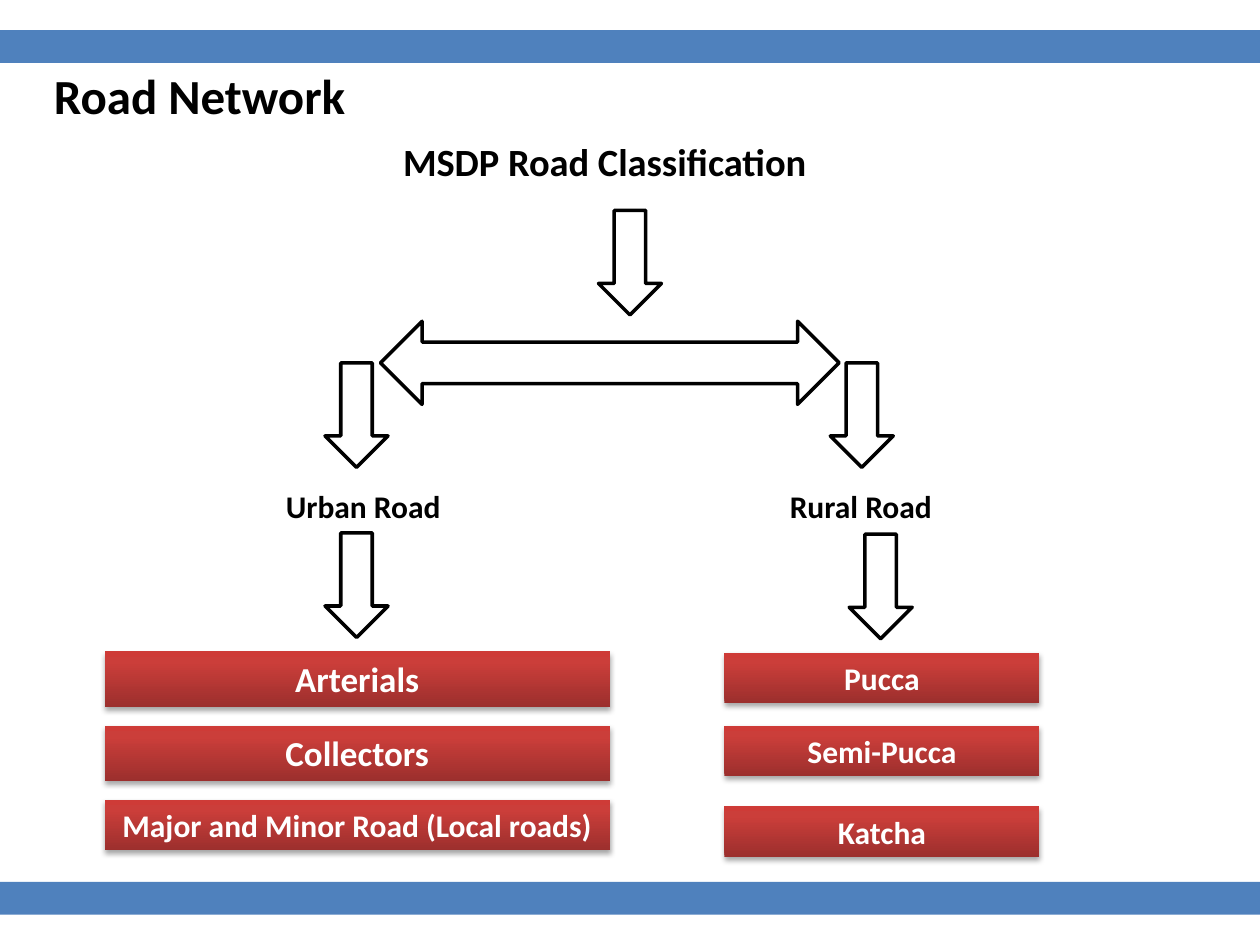
from copy import deepcopy

from lxml import etree
from pptx import Presentation
from pptx.dml.color import RGBColor
from pptx.enum.shapes import MSO_SHAPE
from pptx.enum.text import MSO_ANCHOR, PP_ALIGN
from pptx.oxml.ns import qn
from pptx.util import Inches, Pt

BLUE, BLACK, WHITE = "4F81BD", "000000", "FFFFFF"
RED_STOPS = [(0, "9C2F2D"), (0.8, "CB3E3A"), (1, "CE3B37")]


def color(hex_string):
    return RGBColor.from_string(hex_string)


def write(shape, text, size, hex_string):
    """Put one bold line of text in the shape."""
    shape.text_frame.text = text
    font = shape.text_frame.paragraphs[0].runs[0].font
    font.name = "Calibri"
    font.size = Pt(size)
    font.bold = True
    font.color.rgb = color(hex_string)


presentation = Presentation()
presentation.slide_width = Inches(10)
presentation.slide_height = Inches(7.5)
slide = presentation.slides.add_slide(presentation.slide_layouts[6])
shapes = slide.shapes

# Blue bands at the top and bottom
for top in (0.24, 7):
    band = shapes.add_shape(MSO_SHAPE.RECTANGLE, 0, Inches(top), Inches(10), Inches(0.26))
    band.shadow.inherit = False
    band.fill.solid()
    band.fill.fore_color.rgb = color(BLUE)
    band.line.fill.background()

# Title and headings
headings = [
    ("Road Network", 28, 0.33, 0.47, 2.54, 0.88),
    ("MSDP Road Classification", 22, 3.1, 1.05, 3.81, 0.47),
    ("Urban Road", 18, 2.17, 3.82, 1.44, 0.4),
    ("Rural Road", 18, 6.17, 3.82, 1.34, 0.4),
]
for text, size, left, top, width, height in headings:
    heading = shapes.add_textbox(Inches(left), Inches(top), Inches(width), Inches(height))
    heading.text_frame.word_wrap = False
    write(heading, text, size, BLACK)

# Outlined arrows from the classification to its branches
down_arrows = [(4.75, 1.67), (2.58, 4.23), (6.74, 4.24), (2.58, 2.88), (6.59, 2.88)]
arrows = [(MSO_SHAPE.DOWN_ARROW, left, top, 0.5, 0.83) for left, top in down_arrows]
arrows.insert(3, (MSO_SHAPE.LEFT_RIGHT_ARROW, 3.02, 2.55, 3.64, 0.66))
for kind, left, top, width, height in arrows:
    arrow = shapes.add_shape(kind, Inches(left), Inches(top), Inches(width), Inches(height))
    arrow.shadow.inherit = False
    arrow.fill.solid()
    arrow.fill.fore_color.rgb = color(WHITE)
    arrow.line.color.rgb = color(BLACK)
    arrow.line.width = Pt(2)

# Red boxes: urban classes on the left, rural classes on the right
road_classes = [
    ("Arterials", 20, 0.83, 5.17, 4.01, 0.44),
    ("Collectors", 20, 0.83, 5.76, 4.01, 0.44),
    ("Major and Minor Road (Local roads)", 18, 0.83, 6.35, 4.01, 0.4),
    ("Pucca", 18, 5.75, 5.18, 2.5, 0.4),
    ("Semi-Pucca", 18, 5.75, 5.76, 2.5, 0.4),
    ("Katcha", 18, 5.75, 6.4, 2.5, 0.4),
]
for text, size, left, top, width, height in road_classes:
    box = shapes.add_shape(
        MSO_SHAPE.RECTANGLE, Inches(left), Inches(top), Inches(width), Inches(height)
    )
    box.line.fill.background()
    box.fill.gradient()
    box.fill.gradient_angle = 90
    properties = box._element.spPr
    stop_list = properties.find(qn("a:gradFill")).find(qn("a:gsLst"))
    stop_list.append(deepcopy(stop_list[-1]))
    for stop, (position, hex_string) in zip(box.fill.gradient_stops, RED_STOPS):
        stop.position = position
        stop.color.rgb = color(hex_string)

    box.shadow.inherit = False
    shadow = etree.SubElement(
        properties.find(qn("a:effectLst")), qn("a:outerShdw"),
        blurRad=str(Pt(3.1)), dist=str(Pt(1.8)), dir="5400000", rotWithShape="0",
    )
    shadow_color = etree.SubElement(shadow, qn("a:srgbClr"), val=BLACK)
    etree.SubElement(shadow_color, qn("a:alpha"), val="35000")

    write(box, text, size, WHITE)
    box.text_frame.word_wrap = True
    box.text_frame.vertical_anchor = MSO_ANCHOR.TOP
    box.text_frame.paragraphs[0].alignment = PP_ALIGN.CENTER

presentation.save("out.pptx")
